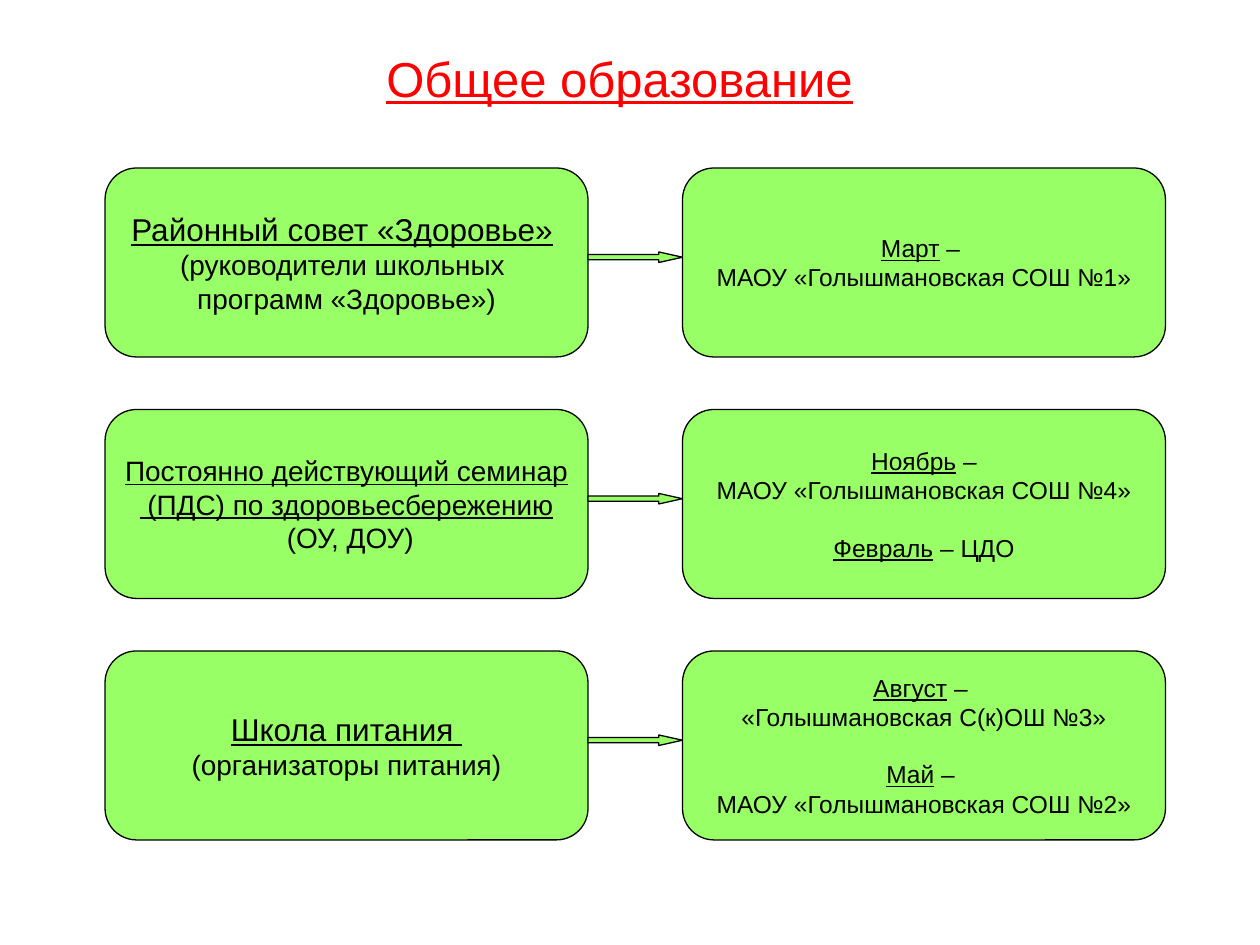
from pptx import Presentation
from pptx.dml.color import RGBColor
from pptx.enum.shapes import MSO_SHAPE as Kind
from pptx.enum.text import MSO_ANCHOR as Anchor, PP_ALIGN as Align
from pptx.util import Pt

HUES = {"title": "FF0000", "fill": "99FF66", "ink": "000000"}
FACE = "Arial"
TITLE = (30, 24, 648, 56)
LEFT, TOP, WIDTH, HEIGHT = 60, 96, 276, 108
GAP, STEP = 54, 138
ARROW_H, ARROW_Y = 6, 48
BREAK = 16

ROWS = [
    (
        [
            [("Районный совет «Здоровье»", 18, True), (" ", 18, False)],
            [("(руководители школьных ", 16, False)],
            [("программ «Здоровье»)", 16, False)],
        ],
        [[("Март", "– ", "МАОУ «Голышмановская СОШ №1»")]],
    ),
    (
        [
            [("Постоянно действующий семинар", 16, True)],
            [(" (ПДС) по здоровьесбережению", 16, True)],
            [(" (ОУ, ДОУ)", 16, False)],
        ],
        [
            [("Ноябрь", "–", "МАОУ «Голышмановская СОШ №4»")],
            [("Февраль", "– ЦДО", "")],
        ],
    ),
    (
        [
            [("Школа питания ", 18, True)],
            [("(организаторы питания)", 16, False)],
        ],
        [
            [("Август", "– ", "«Голышмановская С(к)ОШ №3»")],
            [("Май", "– ", "МАОУ «Голышмановская СОШ №2»")],
        ],
    ),
]


def color(name):
    return RGBColor.from_string(HUES[name])


def add_run(para, text, size, under, hue="ink"):
    run = para.add_run()
    run.text = text
    look = {"name": FACE, "size": Pt(size), "underline": under, "bold": False}
    for key, value in look.items():
        setattr(run.font, key, value)
    run.font.color.rgb = color(hue)


def add_line(frame, runs, first, before=0):
    para = frame.paragraphs[0] if first else frame.add_paragraph()
    para.alignment = Align.CENTER
    para.space_before = Pt(before)
    for run in runs:
        add_run(para, *run)


def add_form(slide, kind, box, adjust):
    form = slide.shapes.add_shape(kind, *map(Pt, box))
    form.shadow.inherit = False
    for index, value in enumerate(adjust):
        form.adjustments[index] = value
    form.fill.solid()
    form.fill.fore_color.rgb = color("fill")
    form.line.color.rgb = color("ink")
    form.line.width = Pt(0.75)
    return form


def add_card(slide, box):
    frame = add_form(slide, Kind.ROUNDED_RECTANGLE, box, [0.167]).text_frame
    frame.word_wrap = False
    frame.vertical_anchor = Anchor.MIDDLE
    return frame


def add_group(slide, box, lines):
    frame = add_card(slide, box)
    for index, runs in enumerate(lines):
        add_line(frame, runs, index == 0)


def add_dates(slide, box, dates):
    frame = add_card(slide, box)
    for index, [(month, dash, place)] in enumerate(dates):
        head = [(month, 14, True), (" " + dash, 14, False)]
        add_line(frame, head, index == 0, BREAK if index else 0)
        if place:
            add_line(frame, [(place, 14, False)], False)


def add_row(slide, box, group, dates):
    left, top, width, height = box
    add_group(slide, box, group)
    add_dates(slide, (left + width + GAP, top, width, height), dates)
    arrow = (left + width, top + ARROW_Y, GAP, ARROW_H)
    add_form(slide, Kind.RIGHT_ARROW, arrow, [0.5, 2.25])


def add_title(slide, box):
    title = slide.shapes.title
    for key, value in zip(("left", "top", "width", "height"), box):
        setattr(title, key, Pt(value))
    frame = title.text_frame
    frame.word_wrap = True
    frame.vertical_anchor = Anchor.TOP
    add_line(frame, [("Общее образование", 28, True, "title")], True)


def main():
    deck = Presentation()
    deck.slide_width, deck.slide_height = Pt(720), Pt(540)
    slide = deck.slides.add_slide(deck.slide_layouts[5])
    add_title(slide, TITLE)
    for index, (group, dates) in enumerate(ROWS):
        box = (LEFT, TOP + index * STEP, WIDTH, HEIGHT)
        add_row(slide, box, group, dates)
    deck.save("out.pptx")


if __name__ == "__main__":
    main()
